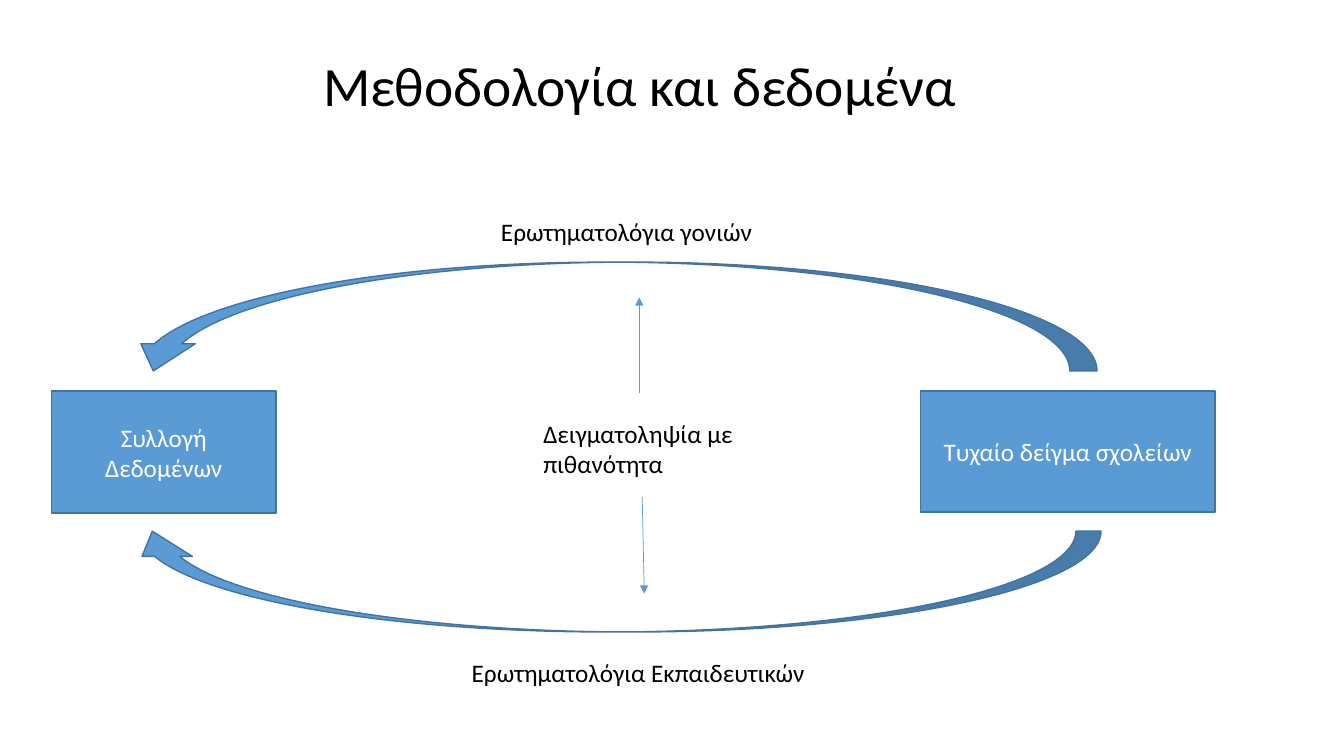
"""Build the methodology and data slide with its sampling cycle."""
from lxml import etree
from pptx import Presentation
from pptx.dml.color import RGBColor
from pptx.enum.shapes import MSO_CONNECTOR, MSO_SHAPE
from pptx.enum.text import MSO_ANCHOR, MSO_AUTO_SIZE, PP_ALIGN
from pptx.oxml.ns import qn
from pptx.util import Inches, Pt

BLUE = RGBColor(0x5B, 0x9B, 0xD5)
DARK_BLUE = RGBColor(0x43, 0x73, 0x9E)
BLACK = RGBColor(0, 0, 0)
WHITE = RGBColor(255, 255, 255)
CENTER, LEFT = PP_ALIGN.CENTER, PP_ALIGN.LEFT
MIDDLE, TOP = MSO_ANCHOR.MIDDLE, MSO_ANCHOR.TOP
NO_AUTOFIT, GROW = MSO_AUTO_SIZE.NONE, MSO_AUTO_SIZE.SHAPE_TO_FIT_TEXT
RECTANGLE = MSO_SHAPE.RECTANGLE
LEFT_ARROW, UP_ARROW = MSO_SHAPE.CURVED_LEFT_ARROW, MSO_SHAPE.CURVED_UP_ARROW
STRAIGHT = MSO_CONNECTOR.STRAIGHT


def write(box, lines, size, color, align, anchor):
    """Fill a box with one formatted paragraph per line."""
    frame = box.text_frame
    frame.vertical_anchor = anchor
    for index, line in enumerate(lines):
        para = frame.add_paragraph() if index else frame.paragraphs[0]
        para.alignment = align
        run = para.add_run()
        run.text = line
        run.font.name = "Calibri"
        run.font.size = Pt(size)
        run.font.color.rgb = color


def add_blue_shape(kind, left, top, width, height, rotation=0):
    """Add a blue outlined preset shape without a shadow."""
    shape = page.shapes.add_shape(kind, Inches(left), Inches(top), Inches(width), Inches(height))
    shape.rotation = rotation
    shape.shadow.inherit = False
    shape.fill.solid()
    shape.fill.fore_color.rgb = BLUE
    shape.line.color.rgb = DARK_BLUE
    shape.line.width = Pt(1)
    return shape


deck = Presentation()
deck.slide_width, deck.slide_height = Inches(13.33), Inches(7.5)
page = deck.slides.add_slide(deck.slide_layouts[5])

title = page.shapes.title
title.left, title.top = Inches(1.2), Inches(0.51)
title.width, title.height = Inches(10.29), Inches(0.74)
title.text_frame.auto_size = NO_AUTOFIT
write(title, ["Μεθοδολογία και δεδομένα"], 39.6, BLACK, CENTER, MIDDLE)
title.text_frame.paragraphs[0].line_spacing = 0.9

collection = add_blue_shape(RECTANGLE, 0.51, 3.88, 2.23, 1.21)
write(collection, ["Συλλογή Δεδομένων"], 18, WHITE, CENTER, MIDDLE)
add_blue_shape(LEFT_ARROW, 5.59, 0.94, 1, 9.66, 90)
add_blue_shape(UP_ARROW, 1.25, 2.6, 9.63, 1.08, 180)
schools = add_blue_shape(RECTANGLE, 9.13, 3.88, 2.92, 1.2)
write(schools, ["Τυχαίο δείγμα σχολείων"], 18, WHITE, CENTER, MIDDLE)

labels = [
    (4.87, 2.1, 2.72, 0.4, ["Ερωτηματολόγια γονιών"]),
    (4.58, 6.47, 3.54, 0.4, ["Ερωτηματολόγια Εκπαιδευτικών"]),
    (5.29, 4.1, 2.1, 0.71, ["Δειγματοληψία με", "πιθανότητα"]),
]
for left, top, width, height, lines in labels:
    label = page.shapes.add_textbox(Inches(left), Inches(top), Inches(width), Inches(height))
    label.text_frame.word_wrap = False
    label.text_frame.auto_size = GROW
    write(label, lines, 18, BLACK, LEFT, TOP)

for start_x, start_y, end_x, end_y in [(6.34, 3.9, 6.34, 2.95), (6.37, 4.93, 6.39, 5.89)]:
    arrow = page.shapes.add_connector(
        STRAIGHT, Inches(start_x), Inches(start_y), Inches(end_x), Inches(end_y))
    arrow.line.color.rgb = BLUE
    arrow.line.width = Pt(0.5)
    etree.SubElement(arrow.line._get_or_add_ln(), qn("a:tailEnd"), type="triangle")
    etree.SubElement(arrow._element.spPr, qn("a:effectLst"))

deck.save("out.pptx")
